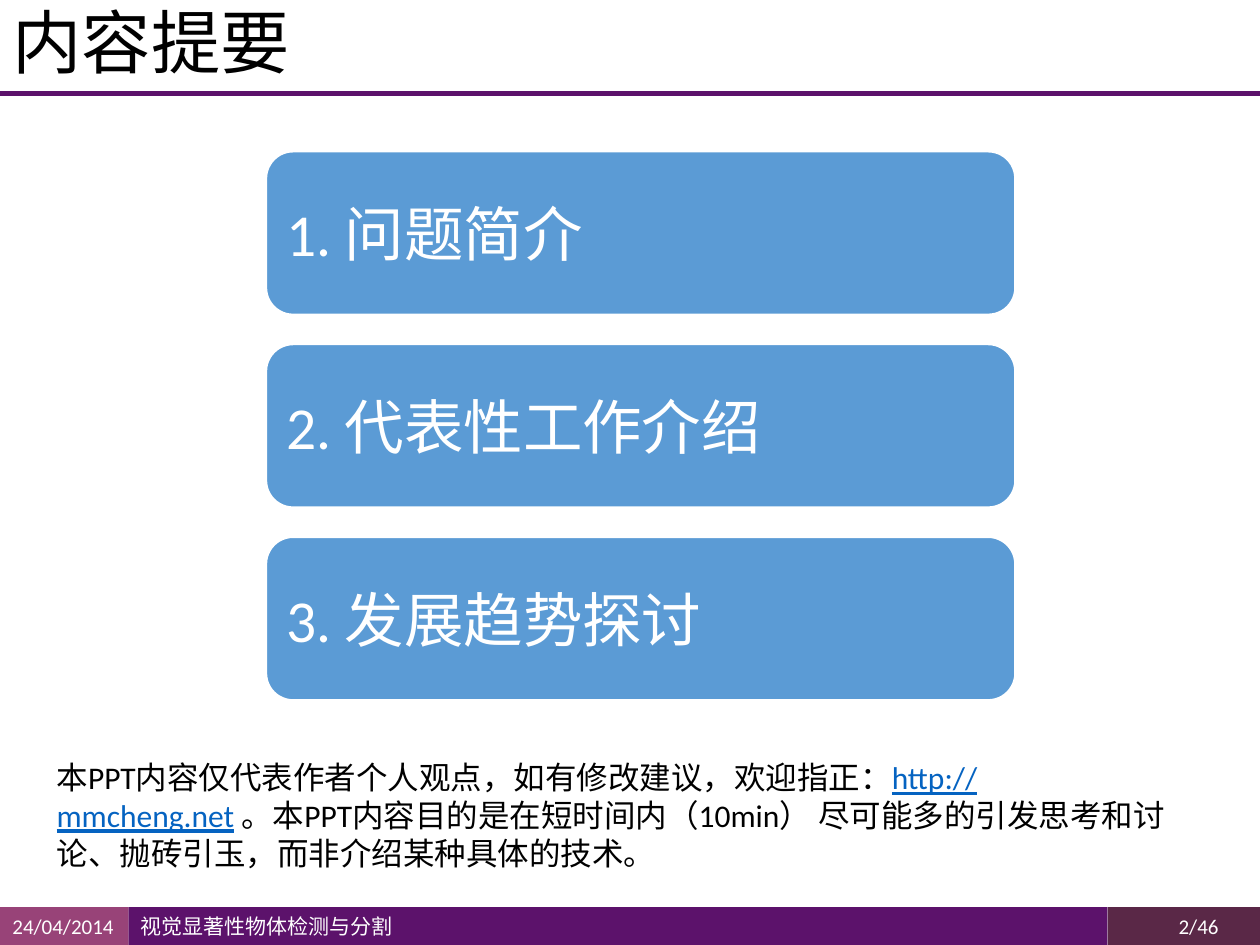
from lxml.etree import SubElement
from pptx import Presentation
from pptx.dml.color import RGBColor
from pptx.enum.shapes import MSO_CONNECTOR, MSO_SHAPE
from pptx.enum.text import MSO_ANCHOR, PP_ALIGN
from pptx.oxml.ns import qn
from pptx.util import Inches, Pt

FONT = "Calibri"
PURPLE, WHITE, BLACK, BLUE, LINK = "5C126B", "FFFFFF", "000000", "5B9BD5", "0563C1"

TITLE = "内容提要"
TOPICS = ["1. 问题简介", "2. 代表性工作介绍", "3. 发展趋势探讨"]
NOTE = [
    ("本PPT内容仅代表作者个人观点，如有修改建议，欢迎指正：", BLACK, False),
    ("http://mmcheng.net", LINK, True),
    (" 。本PPT内容目的是在短时间内（10min） 尽可能多的引发思考和讨论、抛砖引玉，"
     "而非介绍某种具体的技术。", BLACK, False),
]
# left, width, fill, text
FOOTER = [
    (8.79, 1.21, "5A2847", ""),
    (1.02, 7.77, PURPLE, "视觉显著性物体检测与分割"),
    (0, 1.02, "984378", "24/04/2014"),
]
FOOTER_TOP, FOOTER_HEIGHT = 7.2, 0.3
TOPIC_TOP, TOPIC_HEIGHT, TOPIC_STEP = 1.2, 1.3, 1.53


def color(value):
    return RGBColor.from_string(value)


def style(paragraph, size, text_color, align=PP_ALIGN.LEFT):
    paragraph.alignment = align
    paragraph.font.name = FONT
    paragraph.font.size = Pt(size)
    paragraph.font.color.rgb = color(text_color)


def add_box(slide, kind, place, fill, text, size, anchor):
    box = slide.shapes.add_shape(kind, *map(Inches, place))
    box.shadow.inherit = False
    box.fill.solid()
    box.fill.fore_color.rgb = color(fill)
    box.line.fill.background()
    box.text_frame.vertical_anchor = anchor
    if text:
        box.text_frame.text = text
        style(box.text_frame.paragraphs[0], size, WHITE)
    return box


def add_text(slide, place):
    frame = slide.shapes.add_textbox(*map(Inches, place)).text_frame
    frame.word_wrap = True
    return frame


deck = Presentation()
deck.slide_width, deck.slide_height = Inches(10), Inches(7.5)
slide = deck.slides.add_slide(deck.slide_layouts[5])

for left, width, fill, text in FOOTER:
    add_box(slide, MSO_SHAPE.RECTANGLE, (left, FOOTER_TOP, width, FOOTER_HEIGHT),
            fill, text, 12, MSO_ANCHOR.TOP)
page_number = add_text(slide, (9.03, FOOTER_TOP, 0.74, FOOTER_HEIGHT))
page_number.text = "2/46"
style(page_number.paragraphs[0], 12, WHITE, PP_ALIGN.RIGHT)

rule = slide.shapes.add_connector(
    MSO_CONNECTOR.STRAIGHT, 0, Inches(0.74), deck.slide_width, Inches(0.74))
rule.line.color.rgb = color(PURPLE)
rule.line.width = Pt(3)
SubElement(rule._element.spPr, qn("a:effectLst"))

title = slide.shapes.title
title.left, title.top, title.width, title.height = map(Inches, (0, 0, 9.16, 0.73))
title.text_frame.text = TITLE
title.text_frame.vertical_anchor = MSO_ANCHOR.MIDDLE
title.text_frame.paragraphs[0].line_spacing = 0.9
style(title.text_frame.paragraphs[0], 39.6, BLACK)

for index, topic in enumerate(TOPICS):
    top = TOPIC_TOP + index * TOPIC_STEP
    box = add_box(slide, MSO_SHAPE.ROUNDED_RECTANGLE, (2.11, top, 5.95, TOPIC_HEIGHT),
                  BLUE, topic, 34, MSO_ANCHOR.MIDDLE)
    box.line.color.rgb = color(WHITE)
    box.line.width = Pt(1.5)

note = add_text(slide, (0.35, 5.97, 9.19, 1.01)).paragraphs[0]
style(note, 18, BLACK)
for text, text_color, underlined in NOTE:
    span = note.add_run()
    span.text = text
    span.font.color.rgb = color(text_color)
    span.font.underline = underlined

deck.save("out.pptx")
